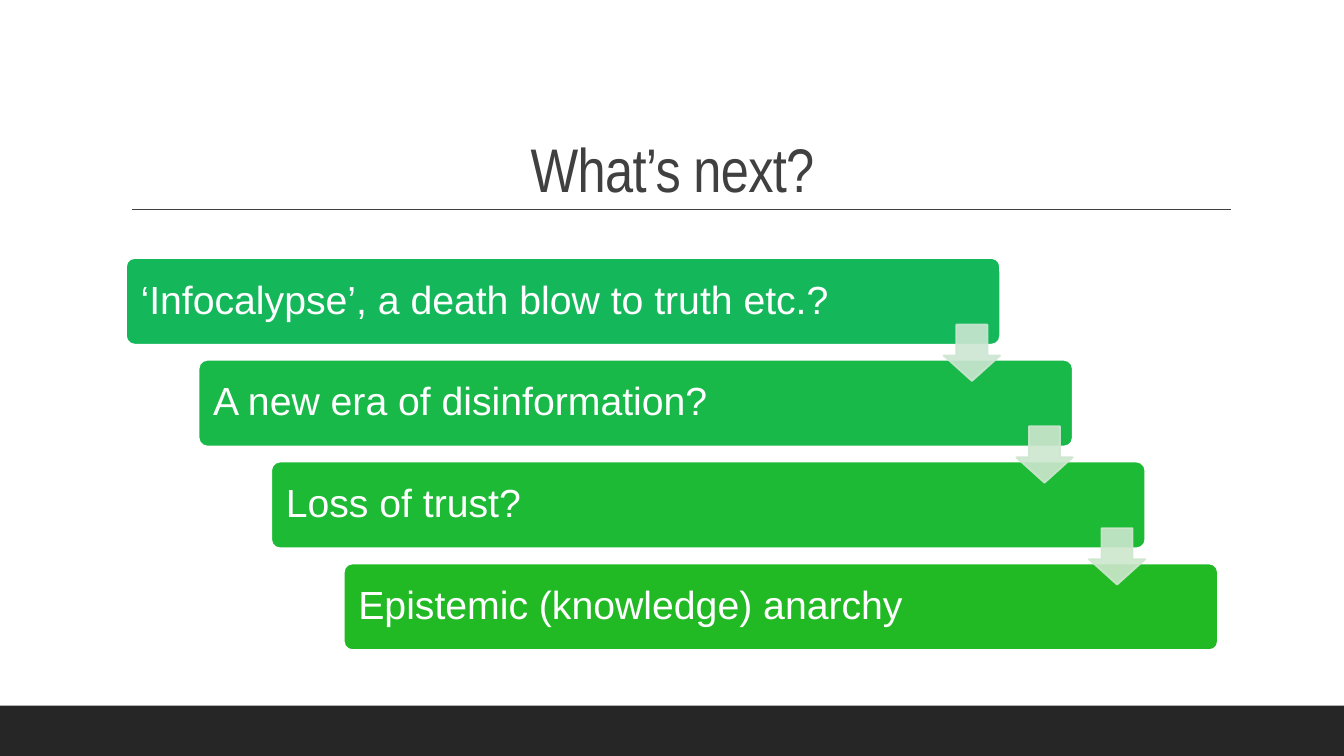
"""Build the "What's next?" slide: four stepped bars joined by down arrows."""
from dataclasses import dataclass

from lxml import etree
from pptx import Presentation
from pptx import util as u
from pptx.dml.color import RGBColor
from pptx.enum import shapes, text
from pptx.oxml import ns
from pptx.shapes.autoshape import Shape
from pptx.slide import Slide

WHITE = RGBColor(0xFF, 0xFF, 0xFF)
CHARCOAL = RGBColor(0x40, 0x40, 0x40)
FOOTER_BLACK = RGBColor(0x26, 0x26, 0x26)

BAR_LEFT, BAR_TOP = 1.25, 2.56
BAR_WIDTH, BAR_HEIGHT = 8.67, 0.86
STEP_X, STEP_Y = 0.72, 1.01
ARROW_SIZE, ARROW_DROP = 0.56, 0.66
ARROW_OPACITY = 90


@dataclass(frozen=True)
class Step:
    wording: str
    color: RGBColor


STEPS = [
    Step("‘Infocalypse’, a death blow to truth etc.?", RGBColor(0x14, 0xB8, 0x5B)),
    Step("A new era of disinformation?", RGBColor(0x18, 0xB9, 0x48)),
    Step("Loss of trust?", RGBColor(0x1C, 0xBA, 0x35)),
    Step("Epistemic (knowledge) anarchy", RGBColor(0x21, 0xBA, 0x24)),
]
ARROW_COLORS = [
    RGBColor(0xCC, 0xE6, 0xD2),
    RGBColor(0xCD, 0xE6, 0xCF),
    RGBColor(0xCD, 0xE7, 0xCD),
]


def add_filled(page: Slide, kind: shapes.MSO_SHAPE, left: float, top: float,
               width: float, height: float, color: RGBColor) -> Shape:
    shape = page.shapes.add_shape(
        kind, u.Inches(left), u.Inches(top), u.Inches(width), u.Inches(height))
    shape.shadow.inherit = False
    shape.fill.solid()
    shape.fill.fore_color.rgb = color
    shape.line.fill.background()
    return shape


def outline(shape: Shape, color: RGBColor) -> None:
    shape.line.color.rgb = color
    shape.line.width = u.Pt(1.25)


def add_title(page: Slide) -> None:
    title = page.shapes.title
    title.left, title.top = u.Inches(1.92), u.Inches(0.99)
    title.width, title.height = u.Inches(9.5), u.Inches(1.1)
    title.text_frame.vertical_anchor = text.MSO_ANCHOR.BOTTOM
    para = title.text_frame.paragraphs[0]
    para.alignment = text.PP_ALIGN.CENTER
    para.line_spacing = 0.9
    para.font.name = "Arial Narrow"
    para.font.size = u.Pt(44)
    para.font.color.rgb = CHARCOAL
    span = para.add_run()
    span.text = "What’s next?"
    span._r.get_or_add_rPr().set("spc", "-50")


def add_rule(page: Slide) -> None:
    rule = page.shapes.add_connector(
        shapes.MSO_CONNECTOR.STRAIGHT,
        u.Inches(1.31), u.Inches(2.08), u.Inches(12.21), u.Inches(2.08))
    rule.line.color.rgb = CHARCOAL
    rule.line.width = u.Pt(1)
    etree.SubElement(rule._element.spPr, ns.qn("a:effectLst"))


def add_bar(page: Slide, index: int, step: Step) -> None:
    bar = add_filled(page, shapes.MSO_SHAPE.ROUNDED_RECTANGLE,
                     BAR_LEFT + index * STEP_X, BAR_TOP + index * STEP_Y,
                     BAR_WIDTH, BAR_HEIGHT, step.color)
    bar.adjustments[0] = 0.1
    outline(bar, WHITE)
    frame = bar.text_frame
    frame.word_wrap = True
    frame.vertical_anchor = text.MSO_ANCHOR.MIDDLE
    frame.margin_left = frame.margin_right = u.Inches(0.12)
    frame.margin_top = frame.margin_bottom = u.Inches(0.12)
    para = frame.paragraphs[0]
    para.text = step.wording
    para.alignment = text.PP_ALIGN.LEFT
    para.line_spacing = 0.9
    para.font.name = "Arial"
    para.font.size = u.Pt(28)
    para.font.color.rgb = WHITE


def add_arrow(page: Slide, index: int, color: RGBColor) -> None:
    arrow = add_filled(page, shapes.MSO_SHAPE.DOWN_ARROW,
                       BAR_LEFT + index * STEP_X + BAR_WIDTH - ARROW_SIZE,
                       BAR_TOP + index * STEP_Y + ARROW_DROP,
                       ARROW_SIZE, ARROW_SIZE, color)
    arrow.adjustments[0] = 0.55
    arrow.adjustments[1] = 0.45
    outline(arrow, color)
    for paint in arrow._element.spPr.iter(ns.qn("a:srgbClr")):
        etree.SubElement(paint, ns.qn("a:alpha"), val=str(ARROW_OPACITY * 1000))


def main() -> None:
    deck = Presentation()
    deck.slide_width, deck.slide_height = u.Inches(13.33), u.Inches(7.5)
    page = deck.slides.add_slide(deck.slide_layouts.get_by_name("Title Only"))
    add_filled(page, shapes.MSO_SHAPE.RECTANGLE, 0, 7, 13.33, 0.5, FOOTER_BLACK)
    add_rule(page)
    add_title(page)
    for index, step in enumerate(STEPS):
        add_bar(page, index, step)
    for index, color in enumerate(ARROW_COLORS):
        add_arrow(page, index, color)
    deck.save("out.pptx")


if __name__ == "__main__":
    main()
